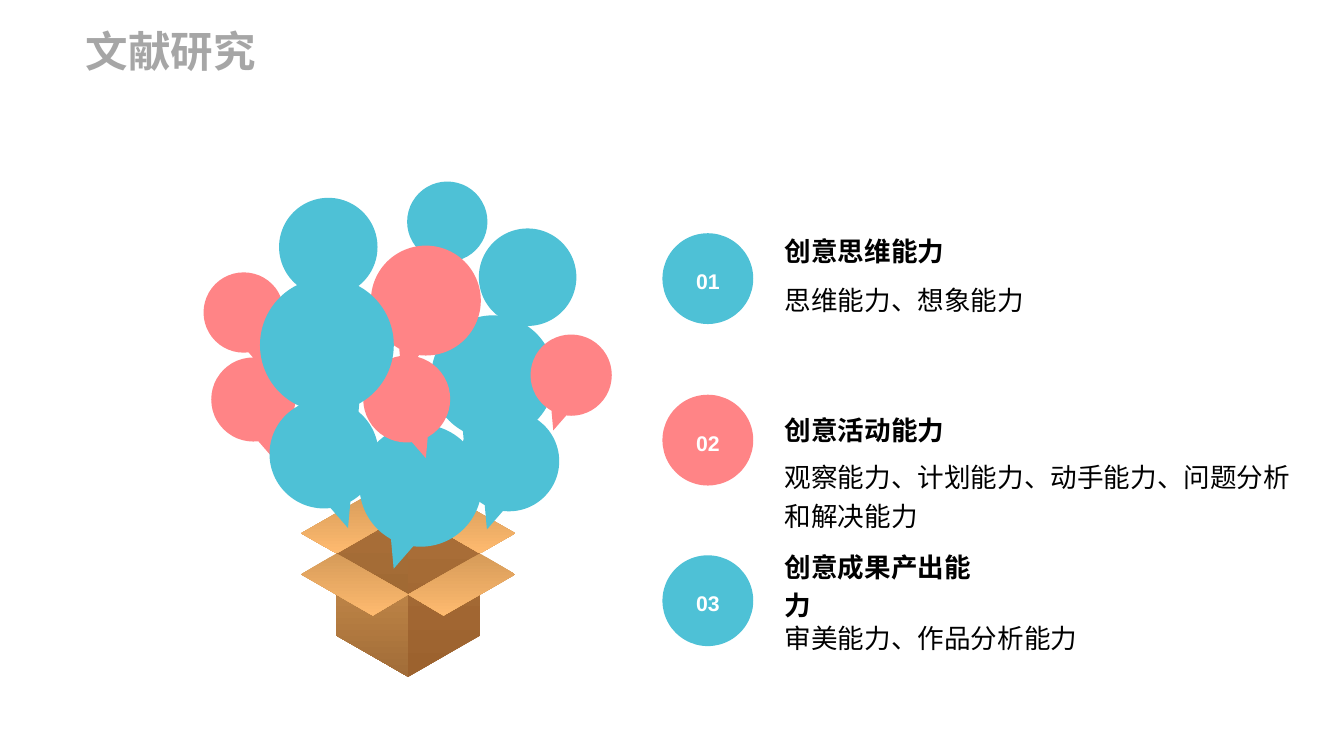
from pptx import Presentation
from pptx.dml.color import RGBColor
from pptx.enum.shapes import MSO_SHAPE
from pptx.enum.text import MSO_ANCHOR, PP_ALIGN

ROUND = MSO_SHAPE.ROUNDED_RECTANGLE
SPEECH = MSO_SHAPE.OVAL_CALLOUT
TOP, MIDDLE = MSO_ANCHOR.TOP, MSO_ANCHOR.MIDDLE
LEFT, CENTER = PP_ALIGN.LEFT, PP_ALIGN.CENTER
PX = 9144  # 100 px to the inch
SANS, CJK = "Arial", "Noto Sans CJK SC"
COLORS = {
    "blue": "4EC1D6", "pink": "FF8486", "white": "FFFFFF",
    "black": "000000", "gray": "A6A6A6",
    "shell": "AA6F39", "shade": "9C622E", "inner": "A16A34",
    "flap": "D69B59", "edge": "FEBA6F",
    "side": "CB8F4D", "base": "A16C38",
}

# left, top, diameter, color, tail side (-1 = left, 1 = right)
BUBBLES = [
    (426, 190, 84, "blue", -1), (376, 444, 128, "blue", -1),
    (480, 430, 105, "blue", -1), (451, 330, 129, "blue", -1),
    (388, 257, 115, "pink", -1), (555, 350, 85, "pink", -1),
    (213, 285, 84, "pink", 1), (380, 372, 91, "pink", 1),
    (221, 374, 88, "pink", 1), (282, 418, 114, "blue", 1),
    (272, 291, 140, "blue", 1), (501, 239, 102, "blue", -1),
    (292, 207, 103, "blue", 1),
]

# top, color, heading top, heading, body box (top, width, height), body
ITEMS = [
    (244, "blue", 243, "创意思维能力", (290, 305, 69), "思维能力、想象能力"),
    (413, "pink", 430, "创意活动能力", (476, 529, 43),
     "观察能力、计划能力、动手能力、问题分析和解决能力"),
    (581, "blue", 594, "创意成果产出能力", (644, 370, 69),
     "审美能力、作品分析能力"),
]


def rgb(name):
    return RGBColor.from_string(COLORS[name])


def scale(*values):
    return [v * PX for v in values]


def paint(shape, color, end=None):
    shape.shadow.inherit = False
    shape.line.fill.background()
    if end is None:
        shape.fill.solid()
        shape.fill.fore_color.rgb = rgb(color)
        return
    shape.fill.gradient()
    shape.fill.gradient_angle = 270
    for stop, name in zip(shape.fill.gradient_stops, (color, end)):
        stop.color.rgb = rgb(name)


def write(shape, text, size, color, font=SANS, bold=True, align=LEFT,
          anchor=MIDDLE, pad=0, lead=1.2):
    frame = shape.text_frame
    frame.word_wrap = True
    frame.vertical_anchor = anchor
    frame.margin_left = frame.margin_right = 0
    frame.margin_top = frame.margin_bottom = pad * PX
    para = frame.paragraphs[0]
    para.text = text
    para.alignment = align
    para.line_spacing = lead
    para.font.name = font
    para.font.bold = bold
    para.font.size = size * 12700
    para.font.color.rgb = rgb(color)


def label(slide, box, text, size, color, **style):
    write(slide.shapes.add_textbox(*scale(*box)), text, size, color, **style)


def carton(slide, left, top):
    # Faces of the box, measured from its top left corner
    def face(points, color, end, flip=False):
        spots = [(left + (224 - x if flip else x), top + y)
                 for x, y in points]
        form = slide.shapes.build_freeform(*spots[0], scale=PX)
        form.add_line_segments(spots[1:], close=True)
        paint(form.convert_to_shape(), color, end)

    face([(112, 21), (37, 64), (37, 150), (112, 193), (187, 150), (187, 64)],
         "shell", "shade")
    face([(112, 21), (37, 64), (112, 107)], "shell", "inner")
    back = [(0, 43), (37, 64), (112, 21), (75, 0)]
    front = [(0, 86), (37, 64), (112, 107), (75, 129)]
    for flip in (False, True):
        face(back, "flap", "edge", flip)
    face([(37, 64), (37, 150), (112, 193), (112, 107)], "side", "base")
    for flip in (False, True):
        face(front, "flap", "edge", flip)


def bubble(slide, left, top, size, color, side):
    shape = slide.shapes.add_shape(SPEECH, *scale(left, top, size, size))
    # Tip of the tail, as a share of the size from the center
    shape.adjustments[0] = 0.22 * side
    shape.adjustments[1] = 0.68
    paint(shape, color)


def item(slide, left, number, row):
    top, color, head, title, (body, width, height), text = row
    disc = slide.shapes.add_shape(ROUND, *scale(left, top, 95, 95))
    disc.adjustments[0] = 0.5
    paint(disc, color)
    write(disc, f"{number:02}", 16, "white", align=CENTER)
    label(slide, (left + 128, head, 211, 32), title, 20, "black", pad=11)
    label(slide, (left + 128, body, width, height), text, 20, "black",
          font=CJK, bold=False, anchor=TOP)


def main():
    deck = Presentation()
    deck.slide_width, deck.slide_height = scale(1406, 791)
    slide = deck.slides.add_slide(deck.slide_layouts[6])
    label(slide, (90, 26, 307, 54), "文献研究", 32, "gray", lead=1.0)
    carton(slide, 315, 515)
    for row in BUBBLES:
        bubble(slide, *row)
    for number, row in enumerate(ITEMS, 1):
        item(slide, 693, number, row)
    deck.save("out.pptx")


if __name__ == "__main__":
    main()
